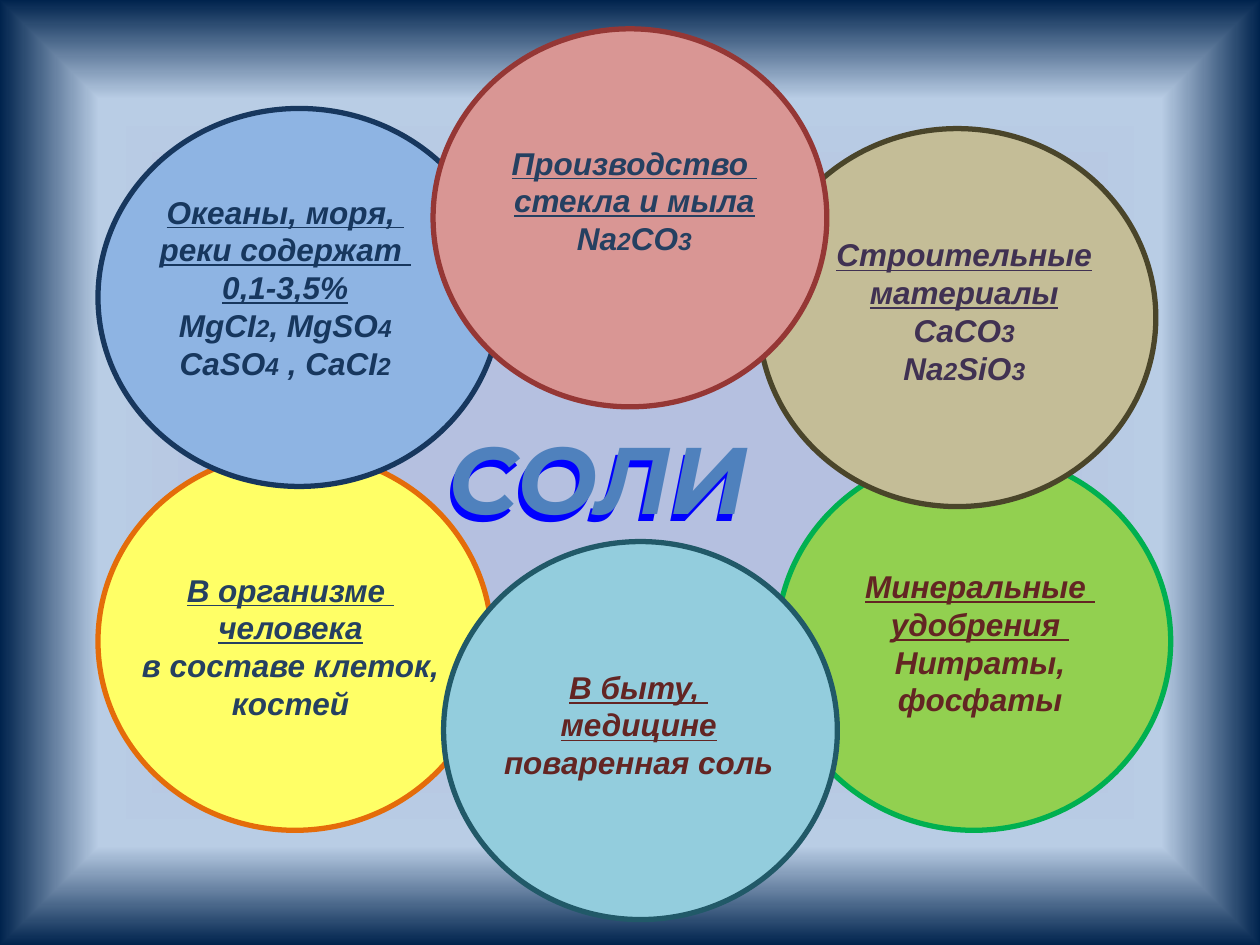
from lxml import etree
from pptx import Presentation
from pptx.dml.color import RGBColor
from pptx.enum.shapes import MSO_SHAPE
from pptx.enum.text import MSO_ANCHOR, PP_ALIGN
from pptx.oxml.ns import qn
from pptx.util import Pt

OVAL = MSO_SHAPE.OVAL
MIDDLE = MSO_ANCHOR.MIDDLE
CENTER = PP_ALIGN.CENTER
SIZE, SMALL, HIGH = 18, 14, 216

STOPS = [(40, "B5C0E0"), (79, "B9CDE5"), (100, "00234D")]

# box: left, top, width; text: shift right, shift down, width; then colours,
# underlined heading lines and plain lines, where "_" marks a small digit
TOPICS = [
    ((444, 258.5, 225), (6, 62, 220), ("92D050", "00B050", "632523"),
     ["Минеральные ", "удобрения "], ["Нитраты,", "фосфаты"]),
    ((56, 258.5, 225), (-16.5, 64, 253), ("FFFF66", "E46C0A", "254061"),
     ["В организме ", "человека"], ["в составе клеток,", "костей"]),
    ((433.5, 73.5, 227), (10.5, 57.5, 214), ("C4BD97", "4A452A", "403152"),
     ["Строительные", "материалы"], ["CaCO_3", "Na_2SiO_3"]),
    ((56, 62, 230), (-28, 44.5, 270), ("8EB4E3", "17375E", "17375E"),
     ["Океаны, моря, ", "реки содержат ", "0,1-3,5%"],
     ["MgCI_2, MgSO_4", "CaSO_4 , CaCI_2"]),
    ((253.5, 309.5, 225), (10.5, 68.5, 202), ("93CDDD", "215968", "632523"),
     ["В быту, ", "медицине"], ["поваренная соль"]),
    ((247.5, 16.5, 225), (0, 62, 230), ("D99694", "953735", "254061"),
     ["Производство ", "стекла и мыла"], ["Na_2CO_3"]),
]


def color(code):
    """Turn a hex string into a colour."""
    return RGBColor.from_string(code)


def style(run, name, size, code, under=False):
    """Format a run in bold italics."""
    font = run.font
    font.name, font.size, font.underline = name, Pt(size), under
    font.bold = font.italic = True
    font.color.rgb = color(code)


def backdrop(slide):
    """Fill the background with a gradient that darkens to the edges."""
    slide.background.fill.gradient()
    grad = next(slide.element.iter(qn("a:gradFill")))
    for part in list(grad):
        grad.remove(part)
    stops = etree.SubElement(grad, qn("a:gsLst"))
    for place, code in STOPS:
        stop = etree.SubElement(stops, qn("a:gs"), pos=str(place * 1000))
        etree.SubElement(stop, qn("a:srgbClr"), val=code)
    route = etree.SubElement(grad, qn("a:path"), path="shape")
    sides = dict.fromkeys("ltrb", "50000")
    etree.SubElement(route, qn("a:fillToRect"), **sides)


def textbox(slide, left, top, width, height):
    """Add a wrapping text box and return its frame."""
    box = slide.shapes.add_textbox(Pt(left), Pt(top), Pt(width), Pt(height))
    box.text_frame.word_wrap = True
    return box.text_frame


def formula(para, line, code, under):
    """Write a line whose marked digits are small."""
    para.alignment = CENTER
    first, *rest = line.split("_")
    parts = [(first, SIZE)]
    for part in rest:
        parts += [(part[0], SMALL), (part[1:], SIZE)]
    for text, size in parts:
        if text:
            run = para.add_run()
            run.text = text
            style(run, "Arial", size, code, under)


def topic(slide, box, inner, codes, heads, lines):
    """Draw one oval with its heading and details."""
    left, top, width = box
    right, down, wide = inner
    fill, edge, ink = codes
    oval = slide.shapes.add_shape(OVAL, Pt(left), Pt(top), Pt(width), Pt(HIGH))
    oval.shadow.inherit = False
    oval.fill.solid()
    oval.fill.fore_color.rgb = color(fill)
    oval.line.color.rgb = color(edge)
    oval.line.width = Pt(3)
    rows = heads + lines
    frame = textbox(slide, left + right, top + down, wide, 21.6 * len(rows) + 7.2)
    for i, row in enumerate(rows):
        para = frame.add_paragraph() if i else frame.paragraphs[0]
        formula(para, row, ink, i < len(heads))


def title(slide, left, top, width, height):
    """Write the title over its offset blue shade."""
    for right, down, code in [(-2, 4, "0000FF"), (0, 0, "4F81BD")]:
        frame = textbox(slide, left + right, top + down, width, height)
        frame.vertical_anchor = MIDDLE
        para = frame.paragraphs[0]
        para.text = "СОЛИ"
        para.alignment = CENTER
        style(para.runs[0], "Montserrat", 54, code)


def main():
    """Build the slide on salts."""
    deck = Presentation()
    deck.slide_width, deck.slide_height = Pt(720), Pt(540)
    slide = deck.slides.add_slide(deck.slide_layouts[6])
    backdrop(slide)
    for item in TOPICS:
        topic(slide, *item)
    title(slide, 228, 236, 228, 73)
    deck.save("out.pptx")


if __name__ == "__main__":
    main()
